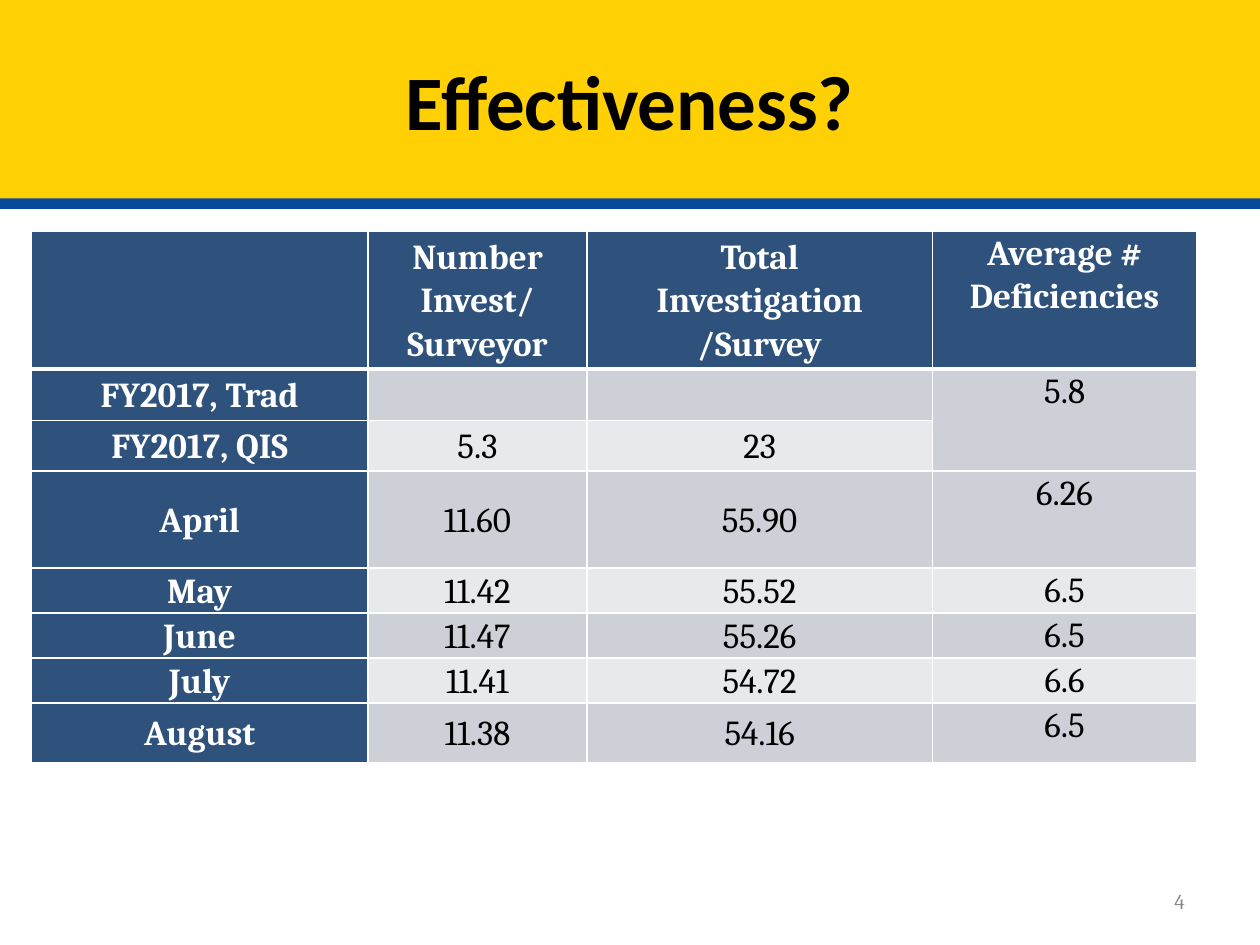
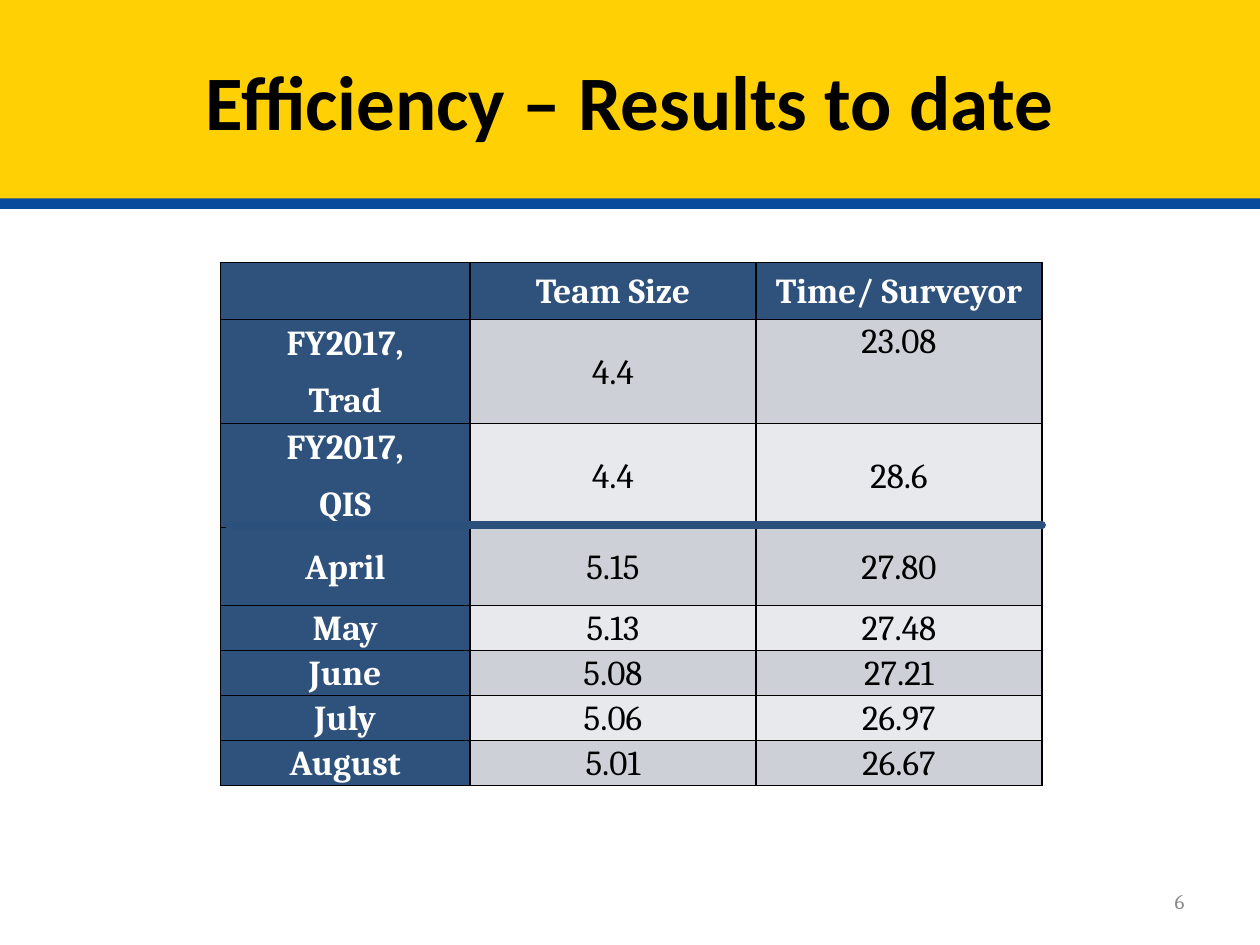
from pptx import Presentation
from pptx.dml.color import RGBColor as RGB
from pptx.enum.shapes import MSO_CONNECTOR as Conn
from pptx.enum.text import MSO_ANCHOR as Anchor, PP_ALIGN as Align
from pptx.oxml import parse_xml
from pptx.oxml.ns import nsdecls
from pptx.util import Inches, Pt

GOLD = RGB(0xFF, 0xD0, 0x04)
BLUE = RGB(0x08, 0x4A, 0x9C)
NAVY = RGB(0x2F, 0x52, 0x7D)
RULE = RGB(0x2C, 0x50, 0x7C)
DARK = RGB(0xCD, 0xD1, 0xD7)
PALE = RGB(0xE8, 0xE9, 0xEC)
GREY = RGB(0x8C, 0x8C, 0x8C)
BLACK = RGB(0, 0, 0)
WHITE = RGB(0xFF, 0xFF, 0xFF)

WIDE, HIGH = Inches(10), Inches(7.5)
BAND = (0, 0, 1, 0.21)
FOOT = (0.717, 0.927, 0.233, 0.053)

EFFECT_BOX = (0.025, 0.245, 0.925, 0.555)
EFFECT_COLS = (2.67, 1.74, 2.74, 2.1)
EFFECT_ROWS = (1.09, 0.41, 0.4, 0.77, 0.34, 0.34, 0.34, 0.47)
EFFECT = (
    ("", "Number Invest/ Surveyor", "Total Investigation /Survey",
     "Average # Deficiencies"),
    ("FY2017, Trad", "", "", "5.8"),
    ("FY2017, QIS", "5.3", "23", ""),
    ("April", "11.60", "55.90", "6.26"),
    ("May", "11.42", "55.52", "6.5"),
    ("June", "11.47", "55.26", "6.5"),
    ("July", "11.41", "54.72", "6.6"),
    ("August", "11.38", "54.16", "6.5"),
)

TEAM_BOX = (0.175, 0.278, 0.652, 0.537)
TEAM_COLS = (1.98, 2.27, 2.27)
TEAM_ROWS = (0.45, 0.79, 0.8, 0.62, 0.34, 0.34, 0.34, 0.34)
TEAM = (
    ("", "Team Size", "Time/ Surveyor"),
    ("FY2017,\nTrad", "4.4", "23.08"),
    ("FY2017,\nQIS", "4.4", "28.6"),
    ("April", "5.15", "27.80"),
    ("May", "5.13", "27.48"),
    ("June", "5.08", "27.21"),
    ("July", "5.06", "26.97"),
    ("August", "5.01", "26.67"),
)


def scale(box):
    """Turn shares of the slide into lengths."""
    x, y, w, h = box
    return int(x * WIDE), int(y * HIGH), int(w * WIDE), int(h * HIGH)


def write(frame, text, font="Cambria", size=20, color=BLACK, bold=False,
          align=Align.CENTER, lead=None, after=0):
    """Fill a text frame, one paragraph for each line of text."""
    frame.word_wrap = True
    frame.text = text
    for par in frame.paragraphs:
        par.alignment = align
        par.line_spacing = lead
        par.space_after = Pt(after)
        for run in par.runs:
            face = run.font
            face.name, face.size, face.bold = font, Pt(size), bold
            face.color.rgb = color


def head(slide, text):
    """Format the title as a gold band with a blue edge below."""
    band = slide.shapes.title
    band.left, band.top, band.width, band.height = scale(BAND)
    band.fill.solid()
    band.fill.fore_color.rgb = GOLD
    band._element.spPr.append(parse_xml(
        f'<a:effectLst {nsdecls("a")}><a:outerShdw blurRad="0" '
        f'dist="{Pt(6)}" dir="5400000" algn="t" rotWithShape="0">'
        f'<a:srgbClr val="{BLUE}"/></a:outerShdw></a:effectLst>'))
    write(band.text_frame, text, font="Calibri", size=44, bold=True)
    band.text_frame.vertical_anchor = Anchor.MIDDLE


def foot(slide, page):
    """Put the page number at the lower right."""
    frame = slide.shapes.add_textbox(*scale(FOOT)).text_frame
    write(frame, str(page), size=12, color=GREY, align=Align.RIGHT)
    frame.vertical_anchor = Anchor.MIDDLE


def edge(cell, color, **sides):
    """Draw the four borders of a cell, 1 pt wide unless given."""
    for spot, side in enumerate("LRTB"):
        cell._tc.get_or_add_tcPr().insert(spot, parse_xml(
            f'<a:ln{side} {nsdecls("a")} w="{Pt(sides.get(side, 1))}">'
            f'<a:solidFill><a:srgbClr val="{color}"/></a:solidFill>'
            f'</a:ln{side}>'))


def grid(slide, box, cols, rows, data, line, thick=1, high=()):
    """Add a table whose columns and rows share out the box."""
    area = scale(box)
    table = slide.shapes.add_table(len(rows), len(cols), *area).table
    for col, part in zip(table.columns, cols):
        col.width = int(area[2] * part / sum(cols))
    for row, part in zip(table.rows, rows):
        row.height = int(area[3] * part / sum(rows))
    for r, texts in enumerate(data):
        for c, text in enumerate(texts):
            cell = table.cell(r, c)
            key = r == 0 or c == 0
            cell.margin_left = cell.margin_right = Inches(0.07)
            cell.margin_top = cell.margin_bottom = 0
            cell.vertical_anchor = (
                Anchor.TOP if (r, c) in high else Anchor.MIDDLE)
            cell.fill.solid()
            cell.fill.fore_color.rgb = NAVY if key else DARK if r % 2 else PALE
            write(cell.text_frame, text, color=WHITE if key else BLACK,
                  bold=key, lead=1.07, after=8)
            edge(cell, line, T=thick if r == 1 else 1,
                 B=thick if r == 0 else 1)
    return table


def rule(slide, box, rows, count):
    """Draw a thick line just below the first rows of a table."""
    x, y, w, h = scale(box)
    level = int(y + h * (sum(rows[:count]) / sum(rows) + 0.01))
    bar = slide.shapes.add_connector(
        Conn.STRAIGHT, int(x + 0.01 * w), level, x + w, level)
    bar.line.color.rgb = RULE
    bar.line.width = Pt(4.5)
    bar.line._get_or_add_ln().set("cap", "rnd")
    bar._element.spPr.append(parse_xml(f'<a:effectLst {nsdecls("a")}/>'))


def start(deck, title, page):
    """Add a slide with its title band and page number."""
    slide = deck.slides.add_slide(deck.slide_layouts[5])
    head(slide, title)
    foot(slide, page)
    return slide


def effect(deck):
    """Build the slide on effectiveness."""
    slide = start(deck, "Effectiveness?", 4)
    last = len(EFFECT_COLS) - 1
    table = grid(slide, EFFECT_BOX, EFFECT_COLS, EFFECT_ROWS, EFFECT, WHITE,
                 thick=3, high=[(r, last) for r in range(len(EFFECT_ROWS))])
    table.cell(1, last).merge(table.cell(2, last))


def team(deck):
    """Build the slide on efficiency."""
    slide = start(deck, "Efficiency – Results to date", 6)
    grid(slide, TEAM_BOX, TEAM_COLS, TEAM_ROWS, TEAM, BLACK, high=[(1, 2)])
    rule(slide, TEAM_BOX, TEAM_ROWS, 3)


def main():
    """Build and save the deck."""
    deck = Presentation()
    deck.slide_width, deck.slide_height = WIDE, HIGH
    effect(deck)
    team(deck)
    deck.save("out.pptx")


if __name__ == "__main__":
    main()
